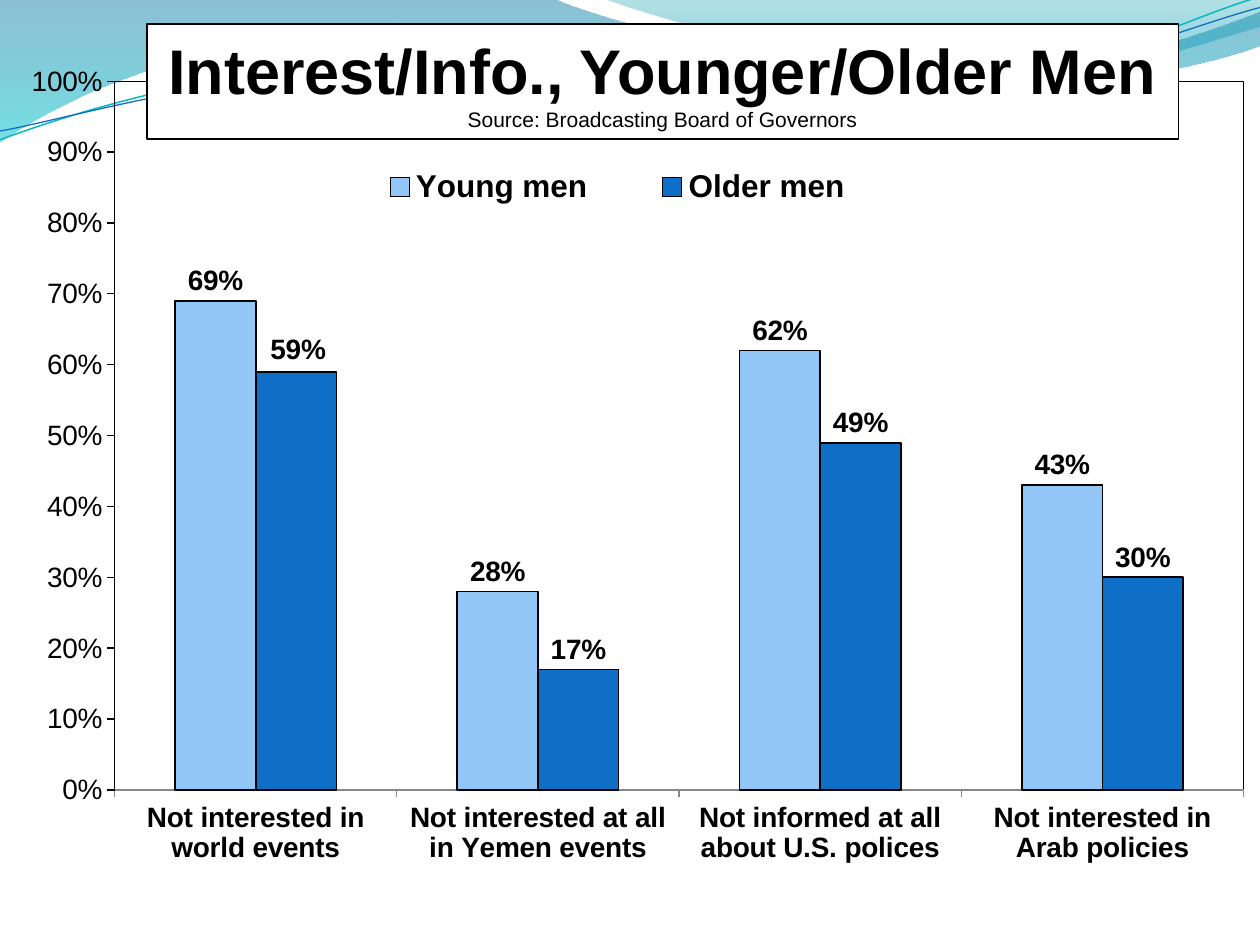
import math

from pptx import Presentation, util as u
from pptx.chart.data import CategoryChartData
from pptx.dml.color import RGBColor
from pptx.enum import chart as ch, shapes, text
from pptx.oxml import parse_xml
from pptx.oxml.ns import nsdecls, qn

# Content
TITLE = "Interest/Info., Younger/Older Men"
SOURCE = "Source: Broadcasting Board of Governors"
CATS = ["Not interested in world events", "Not interested at all in Yemen events",
        "Not informed at all about U.S. polices", "Not interested in Arab policies"]
SERIES = [("Young men", (0.69, 0.28, 0.62, 0.43), "young"),
          ("Older men", (0.59, 0.17, 0.49, 0.30), "older")]

# Theme
T = dict(font="Arial", ink="000000", paper="FFFFFF", young="91C6F7", older="0F6FC6",
         teal="0AB8BF", title=36, source=12, legend=18, label=16)
W, H = 720, 540
TITLE_BOX = (83.8, 13.9, 589.7, 65.5)
PLOT = (0.091, 0.086, 0.896, 0.75)      # fractions of the chart
LEGEND = (0.258, 0.17, 0.464, 0.055)
NUDGE = (0.0016, -0.002)                # first label of the older men
TILT = 357.3

# Waves in points: a start, then line ends (2 numbers) or curves (6 numbers)
BANDS = [
    ([(0, 0), (316.8, -0.7),
      (342.7, 12.2, 478.1, 45.4, 545.8, 45.4), (614.2, 45.4, 689.8, 18.7, 720, 6.5),
      (720.7, 25.9), (707.8, 31.7, 626.4, 54.7, 537.1, 54),
      (447.8, 54, 275, 20.2, 185, 24.5), (92.9, 25.9, 33.1, 59.8, -0.7, 81.4)],
     [(0, "0074A1", 45), (100, "00C6CF", 55)]),
    ([(344.9, -0.7), (366.5, 7.9, 491, 44.6, 553.7, 46.8),
      (616.3, 49.7, 691.9, 23, 720, 15.1), (720, 0)],
     [(0, "00A1A9", 30), (80, "008BBF", 45)]),
]
STRANDS = [
    ([(0, 79.9), (34.6, 67, 113.8, 41, 199.4, 37.4),
      (284.4, 33.8, 427, 64.1, 513.4, 57.6), (599.8, 51.1, 675.4, 10.8, 718.6, -1.4)],
     "teal", 0.85, (359.3, 41.4)),
    ([(0, 74.9), (33.8, 69.1, 118.1, 43.9, 203.8, 40.3),
      (290.2, 36.7, 429.8, 60.5, 516.2, 54), (601.9, 48.2, 678.2, 15.1, 720, 4.3)],
     "older", 0.75, (359.6, 42.5)),
]


def rgb(name):
    return RGBColor.from_string(T[name])


def set_font(f, size, bold=False):
    f.name, f.size, f.bold = T["font"], u.Pt(size), bold
    f.color.rgb = rgb("ink")


def set_line(line, color, width):
    line.color.rgb, line.width = rgb(color), u.Pt(width)


def turn(seg, center, angle):
    """Rotate every point of a segment clockwise about the center."""
    c, n = math.cos(math.radians(angle)), math.sin(math.radians(angle))
    cx, cy = center
    out = []
    for x, y in zip(seg[::2], seg[1::2]):
        out += [cx + (x - cx) * c - (y - cy) * n, cy + (x - cx) * n + (y - cy) * c]
    return tuple(out)


def add_wave(s, segments, close):
    pts = [p for seg in segments for p in zip(seg[::2], seg[1::2])]
    pts = [(round(x * 100), round(y * 100)) for x, y in pts]
    fb = s.shapes.build_freeform(*pts[0], scale=u.Pt(1) / 100)
    fb.add_line_segments(pts[1:], close=close)
    sp = fb.convert_to_shape()
    # Join each three points of a curve into one cubic segment
    lines = iter(list(sp._element.iter(qn("a:lnTo"))))
    for seg in segments[1:]:
        group = [next(lines) for _ in range(len(seg) // 2)]
        if len(group) == 3:
            cubic = parse_xml(f'<a:cubicBezTo {nsdecls("a")}/>')
            group[0].addprevious(cubic)
            for ln in group:
                cubic.append(ln[0])
                ln.getparent().remove(ln)
    sp.shadow.inherit = False
    sp.fill.background()
    return sp


def set_gradient(sp, stops):
    gs = "".join(f'<a:gs pos="{pos * 1000}"><a:srgbClr val="{color}">'
                 f'<a:alpha val="{alpha * 1000}"/></a:srgbClr></a:gs>'
                 for pos, color, alpha in stops)
    old = sp._element.spPr.find(qn("a:noFill"))
    old.getparent().replace(old, parse_xml(
        f'<a:gradFill {nsdecls("a")} rotWithShape="1"><a:gsLst>{gs}</a:gsLst>'
        '<a:lin ang="5400000" scaled="1"/></a:gradFill>'))


def layout(box, head=""):
    size = "".join(f'<c:{k} val="{v}"/>' for k, v in zip("xywh", box))
    return parse_xml(f'<c:layout {nsdecls("c")}><c:manualLayout>{head}{size}'
                     '</c:manualLayout></c:layout>')


def drop_layout(el):
    for old in el.findall(qn("c:layout")):
        el.remove(old)


def add_bars(s):
    data = CategoryChartData(number_format="0%")
    data.categories = CATS
    for name, vals, _ in SERIES:
        data.add_series(name, vals)
    chart = s.shapes.add_chart(ch.XL_CHART_TYPE.COLUMN_CLUSTERED, 0, 0,
                               u.Pt(W), u.Pt(H), data).chart
    chart.has_title = False
    set_font(chart.font, T["legend"])

    # Bars and their labels
    plot = chart.plots[0]
    plot.gap_width, plot.overlap, plot.vary_by_categories = 150, 0, False
    for ser, (_, _, color) in zip(plot.series, SERIES):
        ser.format.fill.solid()
        ser.format.fill.fore_color.rgb = rgb(color)
        set_line(ser.format.line, "ink", 1)
        dl = ser.data_labels
        dl.show_value, dl.number_format, dl.number_format_is_linked = True, "0%", False
        dl.position = ch.XL_LABEL_POSITION.OUTSIDE_END
        set_font(dl.font, T["label"], True)
    first = plot.series[1].points[0].data_label
    set_font(first.font, T["label"], True)
    first.position = ch.XL_LABEL_POSITION.OUTSIDE_END
    label = plot.series[1].data_labels._element.find(qn("c:dLbl"))
    label.find(qn("c:idx")).addnext(layout(NUDGE))

    # Axes
    val, cat = chart.value_axis, chart.category_axis
    val.minimum_scale, val.maximum_scale, val.major_unit = 0, 1, 0.1
    val.has_major_gridlines = False
    val.tick_labels.number_format = "0%"
    val.tick_labels.number_format_is_linked = False
    set_line(val.format.line, "ink", 0.75)
    for axis, bold in ((val, False), (cat, True)):
        axis.major_tick_mark = ch.XL_TICK_MARK.OUTSIDE
        axis.minor_tick_mark = ch.XL_TICK_MARK.NONE
        set_font(axis.tick_labels.font, T["label"], bold)

    # Plot frame
    edge = '<c:xMode val="edge"/><c:yMode val="edge"/>'
    area = chart._chartSpace.chart.plotArea
    drop_layout(area)
    area.insert(0, layout(PLOT, '<c:layoutTarget val="inner"/>' + edge))
    area.append(parse_xml(
        f'<c:spPr {nsdecls("c", "a")}><a:noFill/><a:ln w="9525"><a:solidFill>'
        f'<a:srgbClr val="{T["ink"]}"/></a:solidFill></a:ln></c:spPr>'))

    # Legend
    chart.has_legend = True
    lg = chart.legend
    lg.position, lg.include_in_layout = ch.XL_LEGEND_POSITION.TOP, False
    set_font(lg.font, T["legend"], True)
    drop_layout(lg._element)
    lg._element.find(qn("c:legendPos")).addnext(layout(LEGEND, edge))


def add_title(s):
    sp = s.shapes.add_shape(shapes.MSO_SHAPE.RECTANGLE, *map(u.Pt, TITLE_BOX))
    sp.shadow.inherit = False
    sp.fill.solid()
    sp.fill.fore_color.rgb = rgb("paper")
    set_line(sp.line, "ink", 1)
    tf = sp.text_frame
    tf.word_wrap, tf.vertical_anchor = True, text.MSO_ANCHOR.MIDDLE
    rows = [(TITLE, T["title"], True), (SOURCE, T["source"], False)]
    for i, (words, size, bold) in enumerate(rows):
        p = tf.add_paragraph() if i else tf.paragraphs[0]
        p.alignment = text.PP_ALIGN.CENTER
        r = p.add_run()
        r.text = words
        set_font(r.font, size, bold)


def main():
    prs = Presentation()
    prs.slide_width, prs.slide_height = u.Pt(W), u.Pt(H)
    s = prs.slides.add_slide(prs.slide_layouts[6])
    for segments, stops in BANDS:
        sp = add_wave(s, segments, close=True)
        set_gradient(sp, stops)
        sp.line.fill.background()
    for segments, color, width, center in STRANDS:
        level = [turn(seg, center, -TILT) for seg in segments]
        sp = add_wave(s, level, close=False)
        sp.rotation = TILT
        set_line(sp.line, color, width)
    add_bars(s)
    add_title(s)
    prs.save("out.pptx")


if __name__ == "__main__":
    main()
